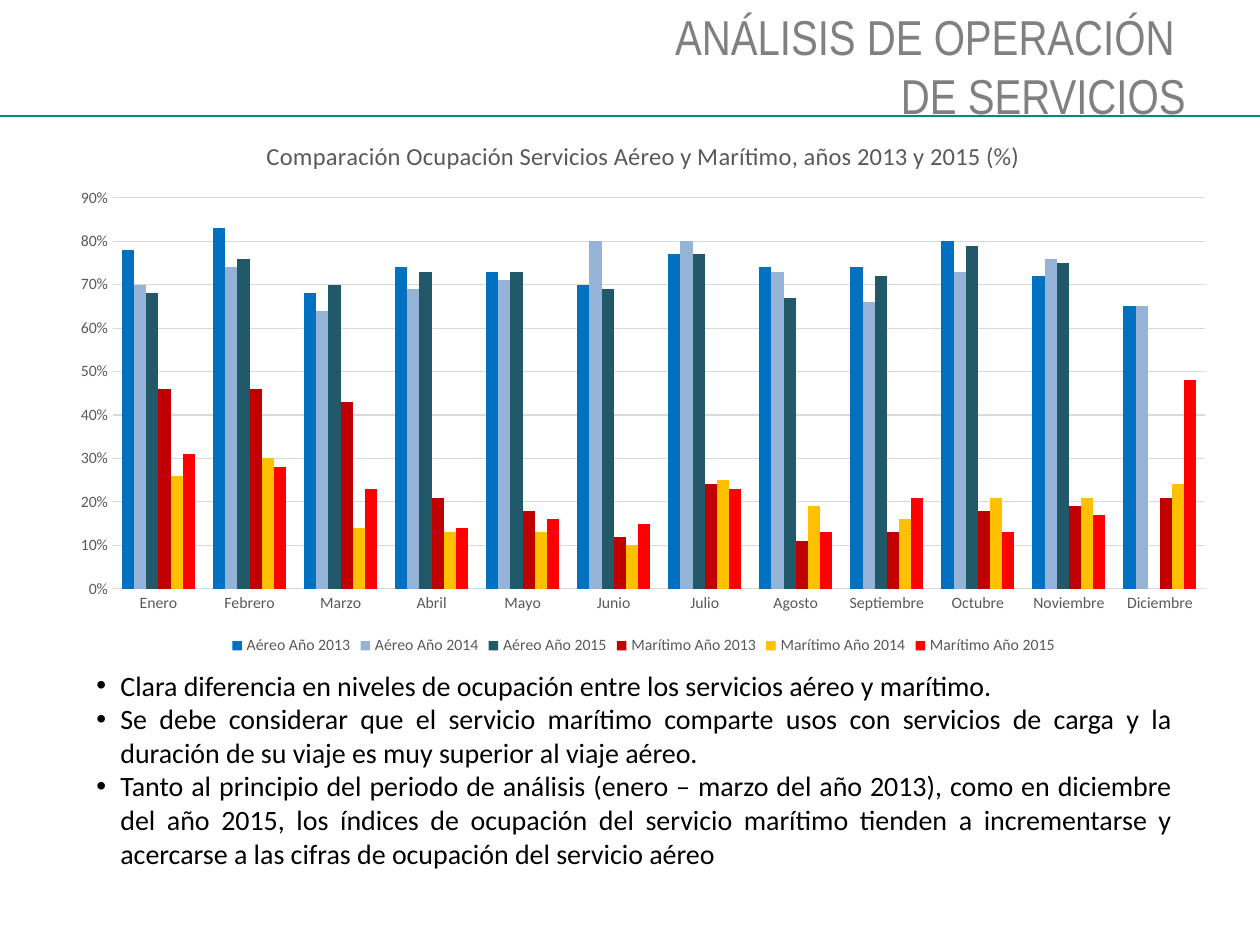
from lxml.etree import SubElement
from pptx import Presentation
from pptx.chart.data import CategoryChartData
from pptx.dml.color import RGBColor
from pptx.enum.chart import XL_CHART_TYPE, XL_LEGEND_POSITION, XL_TICK_MARK
from pptx.enum.shapes import MSO_CONNECTOR
from pptx.enum.text import PP_ALIGN
from pptx.oxml import parse_xml
from pptx.oxml.ns import nsdecls, qn
from pptx.util import Pt

SCALE = 914400 / 126
HEADING = "ANÁLISIS DE OPERACIÓN \vDE SERVICIOS"
CHART_TITLE = "Comparación Ocupación Servicios Aéreo y Marítimo, años 2013 y 2015 (%)"
BULLETS = [
    "Clara diferencia en niveles de ocupación entre los servicios aéreo y marítimo.",
    "Se debe considerar que el servicio marítimo comparte usos con servicios de carga y la "
    "duración de su viaje es muy superior al viaje aéreo.",
    "Tanto al principio del periodo de análisis (enero – marzo del año 2013), como en diciembre "
    "del año 2015, los índices de ocupación del servicio marítimo tienden a incrementarse y "
    "acercarse a las cifras de ocupación del servicio aéreo",
]
MONTHS = ["Enero", "Febrero", "Marzo", "Abril", "Mayo", "Junio", "Julio", "Agosto",
          "Septiembre", "Octubre", "Noviembre", "Diciembre"]
SERIES = [
    ("Aéreo Año 2013", "0070C0", [78, 83, 68, 74, 73, 70, 77, 74, 74, 80, 72, 65]),
    ("Aéreo Año 2014", "95B3D7", [70, 74, 64, 69, 71, 80, 80, 73, 66, 73, 76, 65]),
    ("Aéreo Año 2015", "215968", [68, 76, 70, 73, 73, 69, 77, 67, 72, 79, 75, None]),
    ("Marítimo Año 2013", "C00000", [46, 46, 43, 21, 18, 12, 24, 11, 13, 18, 19, 21]),
    ("Marítimo Año 2014", "FFC000", [26, 30, 14, 13, 13, 10, 25, 19, 16, 21, 21, 24]),
    ("Marítimo Año 2015", "FF0000", [31, 28, 23, 14, 16, 15, 23, 13, 21, 13, 17, 48]),
]
RULE = (0, 116, 1261, 116)
HEADING_BOX = (64, 0, 1134, 158)
BULLET_BOX = (84, 662, 1101, 217)
CHART_BOX = (58, 117, 1171, 543)
PLOT_BOX = (113, 198, 1092, 391)


def px(*lengths):
    return [round(length * SCALE) for length in lengths]


def color(value):
    return RGBColor.from_string(value)


def apply(target, values):
    for name, value in values.items():
        setattr(target, name, value)


def style_font(font, size, value, name="Calibri"):
    apply(font, {"size": Pt(size), "name": name, "bold": False})
    font.color.rgb = color(value)


def add_text(slide, box, texts, size, value, name, alignment):
    frame = slide.shapes.add_textbox(*px(*box)).text_frame
    frame.word_wrap = True
    for index, text in enumerate(texts):
        paragraph = frame.paragraphs[0] if index == 0 else frame.add_paragraph()
        paragraph.text = text
        paragraph.alignment = alignment
        for run in paragraph.runs:
            style_font(run.font, size, value, name)
    return frame


def add_bullets(frame, indent):
    for paragraph in frame.paragraphs:
        properties = paragraph._p.get_or_add_pPr()
        properties.set("marL", str(indent))
        properties.set("indent", str(-indent))
        SubElement(properties, qn("a:buFont")).set("typeface", "Arial")
        SubElement(properties, qn("a:buChar")).set("char", "•")


def add_rule(slide):
    rule = slide.shapes.add_connector(MSO_CONNECTOR.STRAIGHT, *px(*RULE))
    rule.line.color.rgb = color("008782")
    rule.line.width = Pt(0.75)
    SubElement(rule._element.spPr, qn("a:effectLst"))


def place_plot(chart):
    left, top, width, height = CHART_BOX
    plot_left, plot_top, plot_width, plot_height = PLOT_BOX
    shares = {"x": (plot_left - left) / width, "y": (plot_top - top) / height,
              "w": plot_width / width, "h": plot_height / height}
    values = "".join(f'<c:{key} val="{share:.3f}"/>' for key, share in shares.items())
    layout = parse_xml(
        f'<c:layout {nsdecls("c")}><c:manualLayout><c:layoutTarget val="inner"/>'
        f'<c:xMode val="edge"/><c:yMode val="edge"/>{values}</c:manualLayout></c:layout>')
    area = chart._chartSpace.chart.plotArea
    for old in area.findall(qn("c:layout")):
        area.remove(old)
    area.insert(0, layout)


def add_occupancy_chart(slide):
    data = CategoryChartData(number_format="0%")
    data.categories = MONTHS
    for name, _, percentages in SERIES:
        data.add_series(name, [None if p is None else p / 100 for p in percentages])
    chart = slide.shapes.add_chart(XL_CHART_TYPE.COLUMN_CLUSTERED, *px(*CHART_BOX), data).chart
    style_font(chart.font, 10, "000000")
    chart.has_title = True
    chart.chart_title.text_frame.text = CHART_TITLE
    style_font(chart.chart_title.text_frame.paragraphs[0].runs[0].font, 14, "595959")
    chart.has_legend = True
    apply(chart.legend, {"position": XL_LEGEND_POSITION.BOTTOM, "include_in_layout": False})
    style_font(chart.legend.font, 9, "595959")
    for axis in (chart.category_axis, chart.value_axis):
        apply(axis, {"major_tick_mark": XL_TICK_MARK.NONE, "minor_tick_mark": XL_TICK_MARK.NONE})
        style_font(axis.tick_labels.font, 9, "595959")
        axis.format.line.fill.background()
    apply(chart.value_axis, {"minimum_scale": 0, "maximum_scale": 0.9, "major_unit": 0.1})
    apply(chart.value_axis.tick_labels, {"number_format": "0%", "number_format_is_linked": False})
    grid = chart.value_axis.major_gridlines.format.line
    grid.color.rgb = color("D9D9D9")
    grid.width = Pt(0.75)
    plot = chart.plots[0]
    apply(plot, {"gap_width": 150, "overlap": 0, "vary_by_categories": False})
    for series, (_, value, _) in zip(plot.series, SERIES):
        series.format.fill.solid()
        series.format.fill.fore_color.rgb = color(value)
        series.invert_if_negative = False
    place_plot(chart)


def main():
    presentation = Presentation()
    presentation.slide_width, presentation.slide_height = px(1260, 945)
    slide = presentation.slides.add_slide(presentation.slide_layouts[6])
    add_rule(slide)
    bullets = add_text(slide, BULLET_BOX, BULLETS, 16, "000000", "Calibri", PP_ALIGN.JUSTIFY)
    add_bullets(bullets, px(24)[0])
    add_text(slide, HEADING_BOX, [HEADING], 28, "808080", "Arial Narrow", PP_ALIGN.RIGHT)
    add_occupancy_chart(slide)
    presentation.save("out.pptx")


if __name__ == "__main__":
    main()
